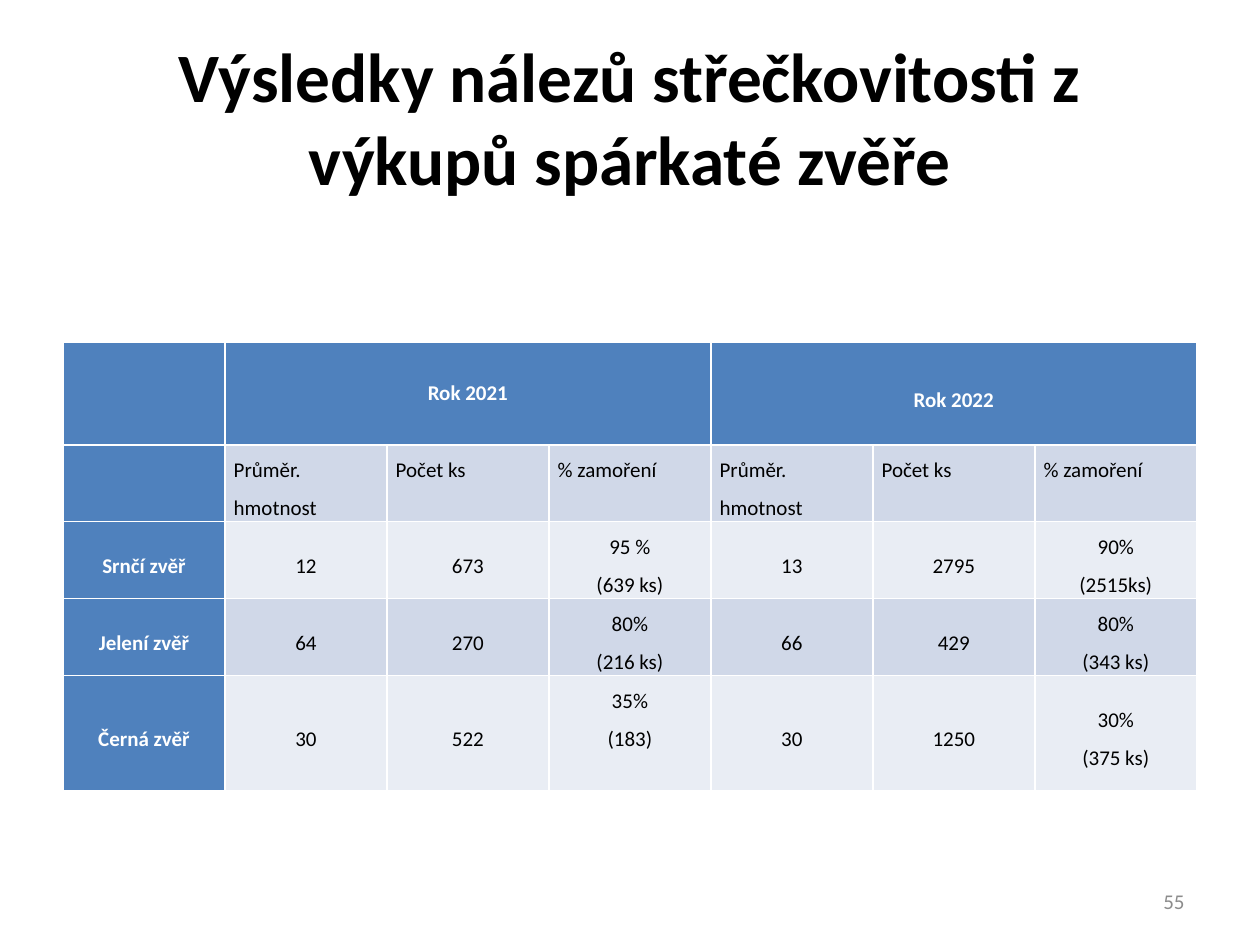
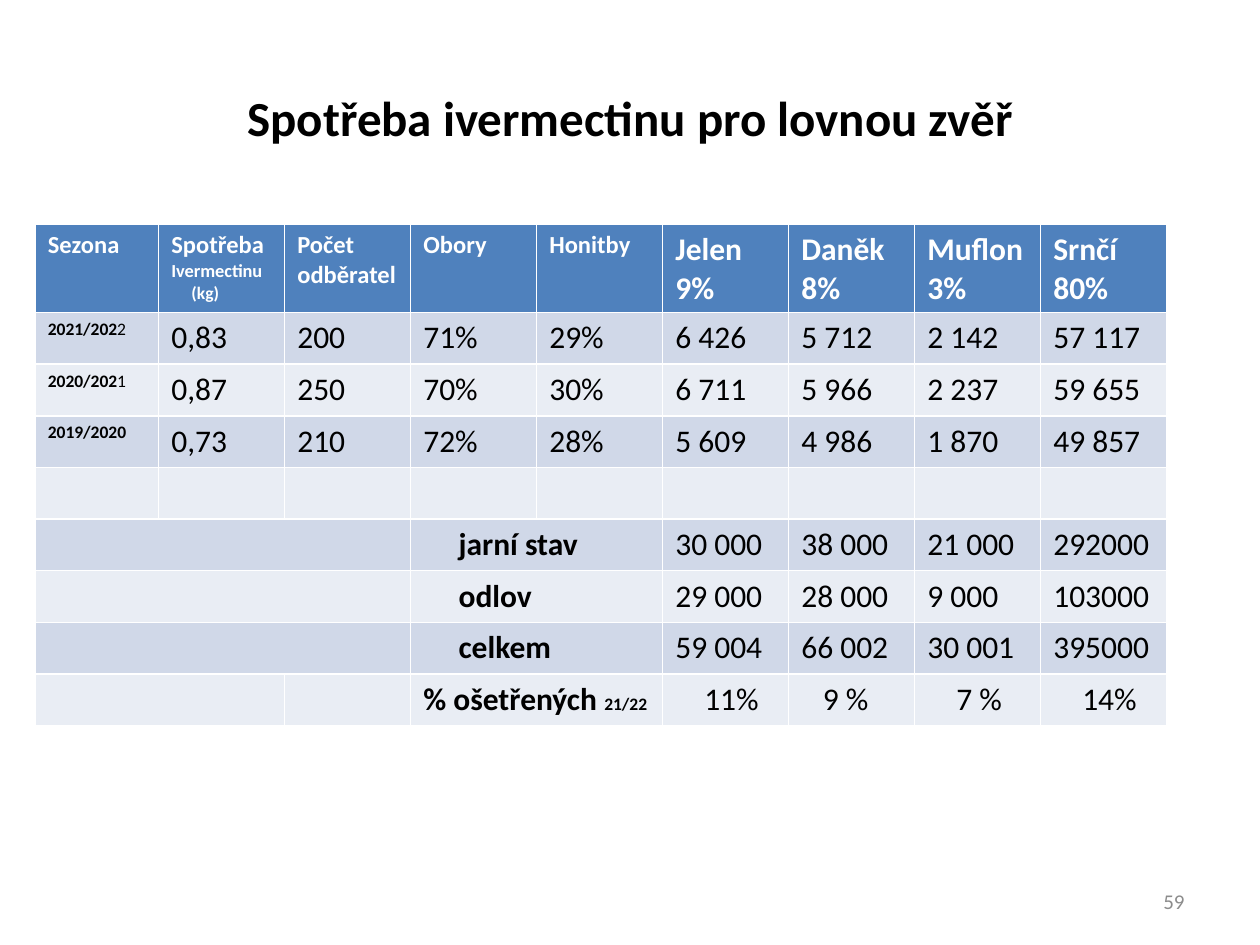
from dataclasses import dataclass
from typing import Optional

from pptx import Presentation
from pptx.dml.color import RGBColor
from pptx.enum.text import MSO_ANCHOR, PP_ALIGN
from pptx.util import Inches, Pt


@dataclass(frozen=True)
class Theme:
    font: str = "Calibri"
    black: RGBColor = RGBColor(0x00, 0x00, 0x00)
    white: RGBColor = RGBColor(0xFF, 0xFF, 0xFF)
    gray: RGBColor = RGBColor(0x8C, 0x8C, 0x8C)
    header: RGBColor = RGBColor(0x4F, 0x81, 0xBD)
    bands: tuple = (RGBColor(0xD0, 0xD8, 0xE8), RGBColor(0xE9, 0xED, 0xF4))
    title_large: float = 39.6
    title_small: float = 28
    value: float = 18
    heading: float = 14
    body: float = 12
    unit: float = 10.5
    tiny: float = 10


THEME = Theme()


@dataclass(frozen=True)
class Span:
    text: str
    size: float
    color: RGBColor = THEME.black
    bold: bool = False


@dataclass(frozen=True)
class Line:
    spans: tuple
    indent: float = 0


@dataclass(frozen=True)
class TextStyle:
    align: PP_ALIGN = PP_ALIGN.LEFT
    anchor: MSO_ANCHOR = MSO_ANCHOR.TOP
    spacing: Optional[float] = None


@dataclass(frozen=True)
class TableLayout:
    left: float
    top: float
    columns: tuple
    rows: tuple


TITLE = TextStyle(PP_ALIGN.CENTER, MSO_ANCHOR.MIDDLE)
PAGE_NUMBER = TextStyle(PP_ALIGN.RIGHT, MSO_ANCHOR.MIDDLE)
FINDING = TextStyle(PP_ALIGN.CENTER, MSO_ANCHOR.MIDDLE, 1.5)
FINDING_TOP = TextStyle(PP_ALIGN.CENTER, MSO_ANCHOR.TOP, 1.5)
FINDING_LABEL = TextStyle(spacing=1.5)
PLAIN = TextStyle()


def line(text: str, size: float, color: RGBColor = THEME.black,
         bold: bool = False, indent: float = 0) -> Line:
    return Line((Span(text, size, color, bold),), indent)


def write_lines(frame, lines: list, style: TextStyle) -> None:
    for index, entry in enumerate(lines):
        para = frame.paragraphs[0] if index == 0 else frame.add_paragraph()
        para.alignment = style.align
        if style.spacing:
            para.line_spacing = style.spacing
        if entry.indent:
            para._p.get_or_add_pPr().set("marL", str(Inches(entry.indent)))
        for span in entry.spans:
            run = para.add_run()
            run.text = span.text
            run.font.name = THEME.font
            run.font.size = Pt(span.size)
            run.font.bold = span.bold
            run.font.color.rgb = span.color


def add_text(page, left: float, top: float, width: float, height: float,
             entry: Line, style: TextStyle) -> None:
    box = page.shapes.add_textbox(Inches(left), Inches(top), Inches(width), Inches(height))
    box.text_frame.word_wrap = True
    box.text_frame.vertical_anchor = style.anchor
    write_lines(box.text_frame, [entry], style)


def add_page(deck, title: str, title_size: float, number: int):
    page = deck.slides.add_slide(deck.slide_layouts[6])
    add_text(page, 0.5, 0.3, 9, 1.25, line(title, title_size, bold=True), TITLE)
    add_text(page, 7.17, 6.95, 2.33, 0.4,
             line(str(number), THEME.body, THEME.gray), PAGE_NUMBER)
    return page


def add_banded_table(page, layout: TableLayout, first_column_colored: bool = False):
    """The default table style draws the white rules; the fills are set here."""
    table = page.shapes.add_table(
        len(layout.rows), len(layout.columns), Inches(layout.left), Inches(layout.top),
        Inches(sum(layout.columns)), Inches(sum(layout.rows))).table
    for column, width in zip(table.columns, layout.columns):
        column.width = Inches(width)
    for row_index, (row, height) in enumerate(zip(table.rows, layout.rows)):
        row.height = Inches(height)
        for column_index, cell in enumerate(row.cells):
            is_header = row_index == 0 or (first_column_colored and column_index == 0)
            cell.fill.solid()
            cell.fill.fore_color.rgb = (
                THEME.header if is_header else THEME.bands[(row_index - 1) % 2])
    return table


def write_cell(cell, lines: list, style: TextStyle) -> None:
    cell.vertical_anchor = style.anchor
    write_lines(cell.text_frame, lines, style)


# Findings by species and year
YEARS = ("Rok 2021", "Rok 2022")
MEASURES = ("Průměr. hmotnost", "Počet ks", "% zamoření")
FINDINGS = (
    ("Srnčí zvěř", "12", "673", "95 %\n(639 ks)", "13", "2795", "90%\n(2515ks)"),
    ("Jelení zvěř", "64", "270", "80%\n(216 ks)", "66", "429", "80%\n(343 ks)"),
    ("Černá zvěř", "30", "522", "35%\n(183)", "30", "1250", "30%\n(375 ks)"),
)


def build_findings(deck) -> None:
    page = add_page(deck, "Výsledky nálezů střečkovitosti z výkupů spárkaté zvěře",
                    THEME.title_large, 55)
    layout = TableLayout(0.5, 2.72, (9 / 7,) * 7, (0.81, 0.61, 0.61, 0.61, 0.92))
    table = add_banded_table(page, layout, first_column_colored=True)
    for cell in table.iter_cells():
        cell.margin_left = cell.margin_right = Inches(0.07)
        cell.margin_top = cell.margin_bottom = 0

    for index, year in enumerate(YEARS):
        first = 1 + index * len(MEASURES)
        table.cell(0, first).merge(table.cell(0, first + len(MEASURES) - 1))
        write_cell(table.cell(0, first),
                   [line(year, THEME.body, THEME.white, True)], FINDING)
        for offset, measure in enumerate(MEASURES):
            write_cell(table.cell(1, first + offset),
                       [line(measure, THEME.body)], FINDING_LABEL)
    table.cell(0, 1).margin_bottom = Inches(0.11)

    for row_index, values in enumerate(FINDINGS, start=2):
        for column_index, value in enumerate(values):
            is_name = column_index == 0
            color = THEME.white if is_name else THEME.black
            style = FINDING_TOP if (row_index, column_index) == (4, 3) else FINDING
            write_cell(table.cell(row_index, column_index),
                       [line(text, THEME.body, color, is_name)
                        for text in value.split("\n")], style)


# Consumption by season and treated share
SMALL_HEADINGS = ("Sezona", "Spotřeba", "Počet\nodběratel", "Obory", "Honitby")
SPECIES = ("Jelen\n9%", "Daněk\n8%", "Muflon\n3%", "Srnčí\n80%")
# Each season: bold part, plain part, values
SEASONS = (
    ("2021/202", "2", ("0,83", "200", "71%", "29%", "6 426", "5 712", "2 142", "57 117")),
    ("2020/202", "1", ("0,87", "250", "70%", "30%", "6 711", "5 966", "2 237", "59 655")),
    ("2019/2020", "", ("0,73", "210", "72%", "28%", "5 609", "4 986", "1 870", "49 857")),
)
STOCK = (
    ("jarní stav", ("30 000", "38 000", "21 000", "292000")),
    ("odlov", ("29 000", "28 000", "9 000", "103000")),
    ("celkem", ("59 004", "66 002", "30 001", "395000")),
)
TREATED = (("11%", 0.23), ("9 %", 0.17), ("7 %", 0.23), ("14%", 0.23))
LABEL_COLUMN = 3
SPECIES_COLUMN = 5


def build_consumption(deck) -> None:
    page = add_page(deck, "Spotřeba ivermectinu pro lovnou zvěř", THEME.title_small, 59)
    layout = TableLayout(0.28, 1.78, (0.98,) + (1,) * 8, (0.7,) + (0.41,) * 8)
    table = add_banded_table(page, layout)

    # Header row
    for column_index, heading in enumerate(SMALL_HEADINGS + SPECIES):
        size = THEME.heading if column_index < SPECIES_COLUMN else THEME.value
        lines = [line(text, size, THEME.white, True) for text in heading.split("\n")]
        if heading == "Spotřeba":
            lines += [line("Ivermectinu", THEME.unit, THEME.white, True),
                      line("(kg)", THEME.tiny, THEME.white, True, 0.16)]
        write_cell(table.cell(0, column_index), lines, PLAIN)

    # Seasons
    for row_index, (bold_part, plain_part, values) in enumerate(SEASONS, start=1):
        spans = (Span(bold_part, THEME.tiny, bold=True),)
        if plain_part:
            spans += (Span(plain_part, THEME.tiny),)
        write_cell(table.cell(row_index, 0), [Line(spans)], PLAIN)
        for column_index, value in enumerate(values, start=1):
            write_cell(table.cell(row_index, column_index),
                       [line(value, THEME.value)], PLAIN)

    # Stock and treated share
    treated_label = Line((Span("% ošetřených ", THEME.value, bold=True),
                          Span("21/22", THEME.tiny, bold=True)))
    summary = [(line(label, THEME.value, bold=True, indent=0.28),
                [line(value, THEME.value) for value in values])
               for label, values in STOCK]
    summary.append((treated_label, [line(share, THEME.value, indent=indent)
                                    for share, indent in TREATED]))
    for row_index, (label, values) in enumerate(summary, start=5):
        last_blank = 1 if label is treated_label else 2
        table.cell(row_index, 0).merge(table.cell(row_index, last_blank))
        label_cell = table.cell(row_index, LABEL_COLUMN)
        label_cell.merge(table.cell(row_index, SPECIES_COLUMN - 1))
        write_cell(label_cell, [label], PLAIN)
        for column_index, value in enumerate(values, start=SPECIES_COLUMN):
            write_cell(table.cell(row_index, column_index), [value], PLAIN)


def main() -> None:
    deck = Presentation()
    deck.slide_width = Inches(10)
    deck.slide_height = Inches(7.5)
    build_findings(deck)
    build_consumption(deck)
    deck.save("out.pptx")


if __name__ == "__main__":
    main()
